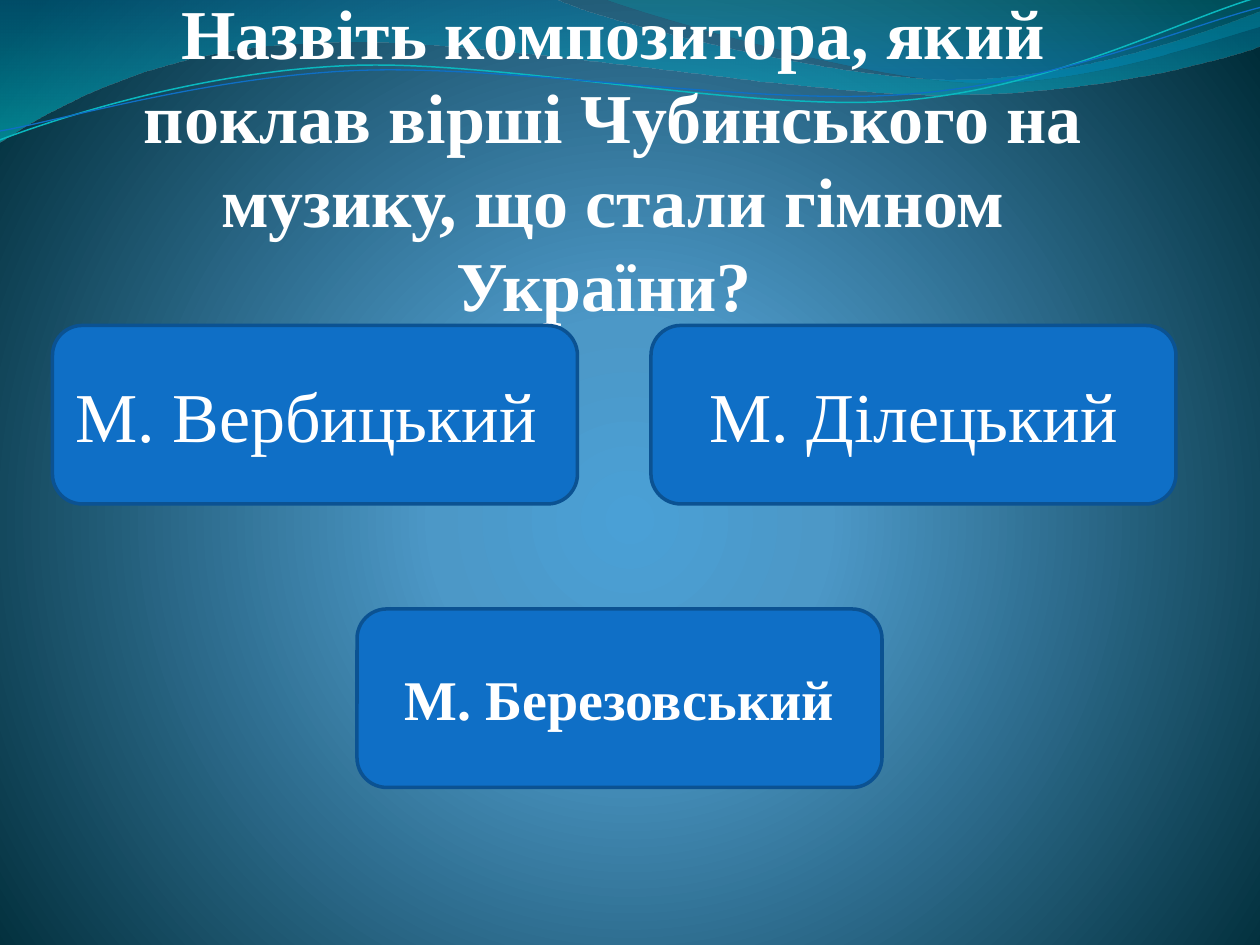
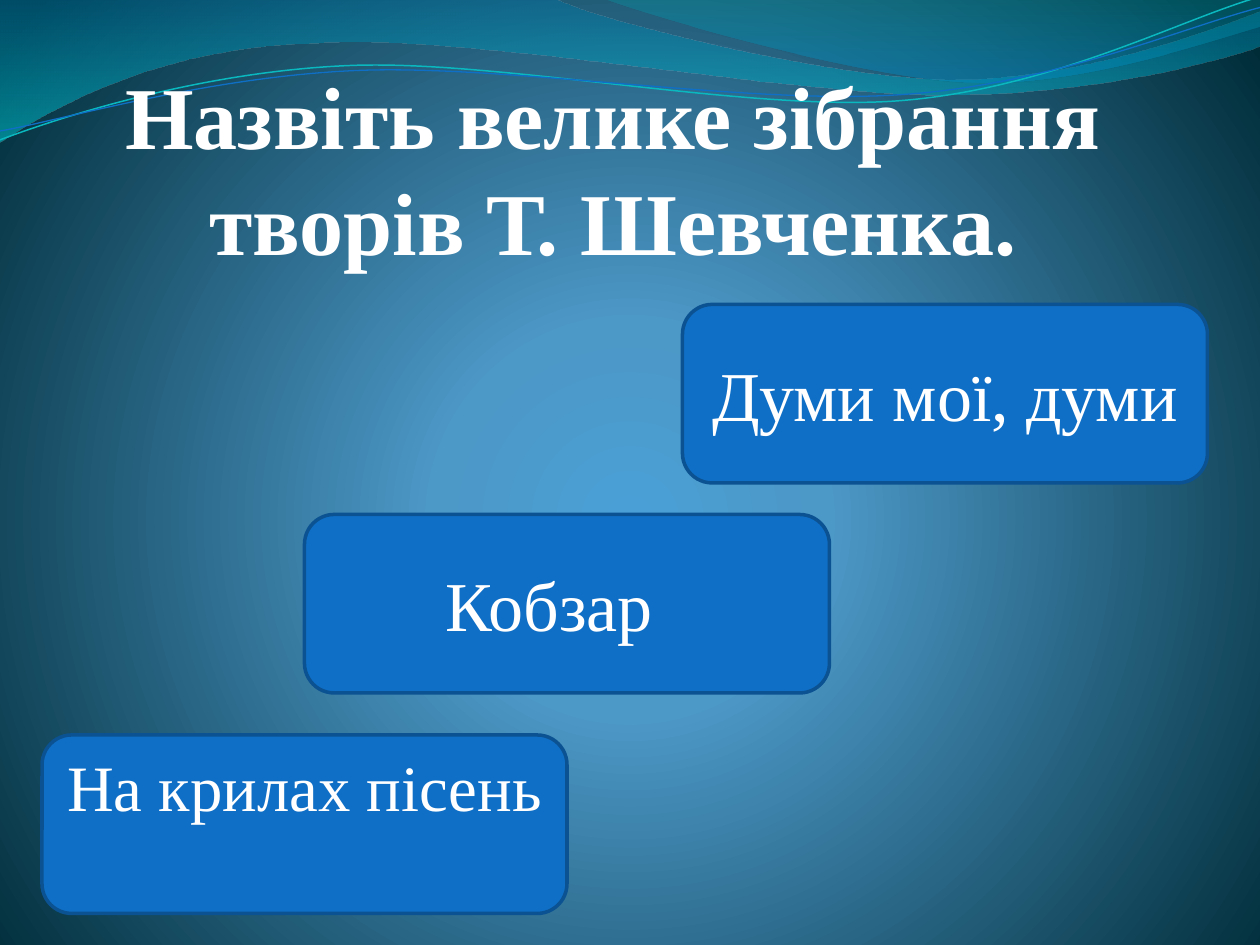
from math import cos, radians, sin
from lxml.etree import SubElement as Sub
from pptx import Presentation
from pptx.dml.color import RGBColor
from pptx.enum.shapes import MSO_SHAPE as Shape
from pptx.enum.text import MSO_ANCHOR as Anchor, PP_ALIGN as Align
from pptx.oxml.ns import qn
from pptx.util import Inches, Pt

CELL = Inches(1) // 12
COLUMNS, ROWS = 120, 90
FONT = "Times New Roman"
WHITE, BLUE, NAVY, TEAL = "FFFFFF", "0F6FC6", "0B5292", "0AB8BF"
BACKDROP = [(0, "4AA0D6", 100), (25, "4C98C7", 100), (100, "002C38", 100)]
ANSWER_SIZE = (50, 17)
STRAND_TILT = -2.7

BANDS = [
    ((0, 0),
     [(4.4, -0.01),
      (4.76, 0.17, 6.64, 0.63, 7.58, 0.63), (8.53, 0.63, 9.58, 0.26, 10, 0.09),
      (10.01, 0.36),
      (9.83, 0.44, 8.7, 0.76, 7.46, 0.75), (6.22, 0.75, 3.82, 0.28, 2.57, 0.34),
      (1.29, 0.36, 0.46, 0.83, -0.01, 1.13), (0, 0)],
     [(0, "0074A1", 45), (100, "00C6CF", 55)]),
    ((4.79, -0.01),
     [(5.09, 0.11, 6.82, 0.62, 7.69, 0.65), (8.56, 0.69, 9.61, 0.32, 10, 0.21),
      (10, 0), (4.79, -0.01)],
     [(0, "00A1A9", 30), (80, "008BBF", 45)]),
]
STRANDS = [
    ((0, 1.11),
     [(0.48, 0.93, 1.58, 0.57, 2.77, 0.52), (3.95, 0.47, 5.93, 0.89, 7.13, 0.8),
      (8.33, 0.71, 9.38, 0.15, 9.98, -0.02)],
     (4.99, 0.58), TEAL, 0.85),
    ((0, 1.04),
     [(0.47, 0.96, 1.64, 0.61, 2.83, 0.56), (4.03, 0.51, 5.97, 0.84, 7.17, 0.75),
      (8.36, 0.67, 9.41, 0.21, 10, 0.06)],
     (5, 0.59), BLUE, 0.75),
]

QUESTIONS = [
    dict(
        question="Назвіть композитора, який поклав вірші Чубинського на музику, "
                 "що стали гімном України? ",
        question_box=(7, 18, 103, 13), question_size=40,
        answers=[
            ("М. Вербицький", (5, 31), dict(insets=(0.03, 0.05, 0.17, 0.05))),
            ("М. Ділецький", (62, 31), {}),
            ("М. Березовський", (34, 58), dict(size=32, bold=True)),
        ]),
    dict(
        question="Назвіть велике зібрання творів Т. Шевченка.",
        question_box=(7, 3, 103, 23), question_size=50.4,
        answers=[
            ("Думи мої, думи", (65, 29), {}),
            ("Кобзар", (29, 49), dict(insets=(0.1, 0.05, 0.38, 0.05))),
            ("На крилах пісень", (4, 70),
             dict(size=37, insets=(0.1, 0.05, 0.1, 0.66))),
        ]),
]


def color(hex_code):
    return RGBColor.from_string(hex_code)


def cells(*counts):
    return [count * CELL for count in counts]


def set_gradient(fill, element, stops, center=None):
    fill.gradient()
    gradient = next(element.iter(qn("a:gradFill")))
    for part in list(gradient):
        gradient.remove(part)
    stop_list = Sub(gradient, qn("a:gsLst"))
    for position, hex_code, opacity in stops:
        stop = Sub(stop_list, qn("a:gs"), pos=str(position * 1000))
        tint = Sub(stop, qn("a:srgbClr"), val=hex_code)
        if opacity < 100:
            Sub(tint, qn("a:alpha"), val=str(opacity * 1000))
    if center:
        circle = Sub(gradient, qn("a:path"), path="circle")
        Sub(circle, qn("a:fillToRect"),
            {side: str(share * 1000) for side, share in center.items()})
    else:
        Sub(gradient, qn("a:lin"), ang="5400000", scaled="1")


def turn(point, pivot, degrees):
    angle = radians(degrees)
    x, y = (value - middle for value, middle in zip(point, pivot))
    return (pivot[0] + x * cos(angle) - y * sin(angle),
            pivot[1] + x * sin(angle) + y * cos(angle))


def bend(curve, segments):
    lines = list(curve.element.iter(qn("a:lnTo")))
    for segment in segments:
        corners = [lines.pop(0) for _ in range(len(segment) // 2)]
        if len(corners) == 3:
            corners[0].addprevious(curve_to := corners[0].makeelement(qn("a:cubicBezTo")))
            for corner in corners:
                curve_to.append(corner[0])
                corner.getparent().remove(corner)


def draw_curve(slide, box, start, segments, closed=False, pivot=(0, 0), tilt=0):
    left, top, width = box
    unit = width / 10
    corners = [start] + [segment[i:i + 2] for segment in segments
                         for i in range(0, len(segment), 2)]
    points = [(round(left + x * unit), round(top + y * unit))
              for x, y in (turn(corner, pivot, -tilt) for corner in corners)]
    builder = slide.shapes.build_freeform(*points[0])
    builder.add_line_segments(points[1:], close=closed)
    curve = builder.convert_to_shape()
    bend(curve, segments)
    curve.rotation = tilt % 360
    curve.shadow.inherit = False
    return curve


def draw_waves(slide, box):
    for start, segments, stops in BANDS:
        band = draw_curve(slide, box, start, segments, closed=True)
        set_gradient(band.fill, band.element, stops)
        band.line.fill.background()
    for start, segments, pivot, hex_code, weight in STRANDS:
        strand = draw_curve(slide, box, start, segments, pivot=pivot, tilt=STRAND_TILT)
        strand.fill.background()
        strand.line.color.rgb = color(hex_code)
        strand.line.width = Pt(weight)


def write(shape, text, size=40, bold=False, anchor=Anchor.MIDDLE,
          insets=(0.1, 0.05, 0.1, 0.05), before=0.2):
    frame = shape.text_frame
    frame.word_wrap = True
    frame.vertical_anchor = anchor
    (frame.margin_left, frame.margin_top,
     frame.margin_right, frame.margin_bottom) = map(Inches, insets)
    paragraph = frame.paragraphs[0]
    paragraph.alignment = Align.CENTER
    paragraph.space_before = Pt(size * before)
    run = paragraph.add_run()
    run.text = text
    run.font.name = FONT
    run.font.size = Pt(size)
    run.font.bold = bold
    run.font.color.rgb = color(WHITE)


def draw_question(slide, box, text, size):
    title = slide.shapes.add_textbox(*cells(*box))
    write(title, text, size=size, bold=True, anchor=Anchor.BOTTOM,
          insets=(0, 0, 0.02, 0), before=0)


def draw_answer(slide, corner, text, **text_format):
    button = slide.shapes.add_shape(Shape.ROUNDED_RECTANGLE,
                                    *cells(*corner, *ANSWER_SIZE))
    button.shadow.inherit = False
    button.fill.solid()
    button.fill.fore_color.rgb = color(BLUE)
    button.line.color.rgb = color(NAVY)
    button.line.width = Pt(2)
    write(button, text, **text_format)


def quiz_slide(deck, question, question_box, question_size, answers):
    slide = deck.slides.add_slide(deck.slide_layouts[6])
    set_gradient(slide.background.fill, slide.element, BACKDROP,
                 center=dict(l=10, t=110, r=10, b=100))
    draw_waves(slide, (0, 0, deck.slide_width))
    draw_question(slide, question_box, question, question_size)
    for text, corner, text_format in answers:
        draw_answer(slide, corner, text, **text_format)


def main():
    deck = Presentation()
    deck.slide_width, deck.slide_height = cells(COLUMNS, ROWS)
    for quiz in QUESTIONS:
        quiz_slide(deck, **quiz)
    deck.save("out.pptx")


if __name__ == "__main__":
    main()
